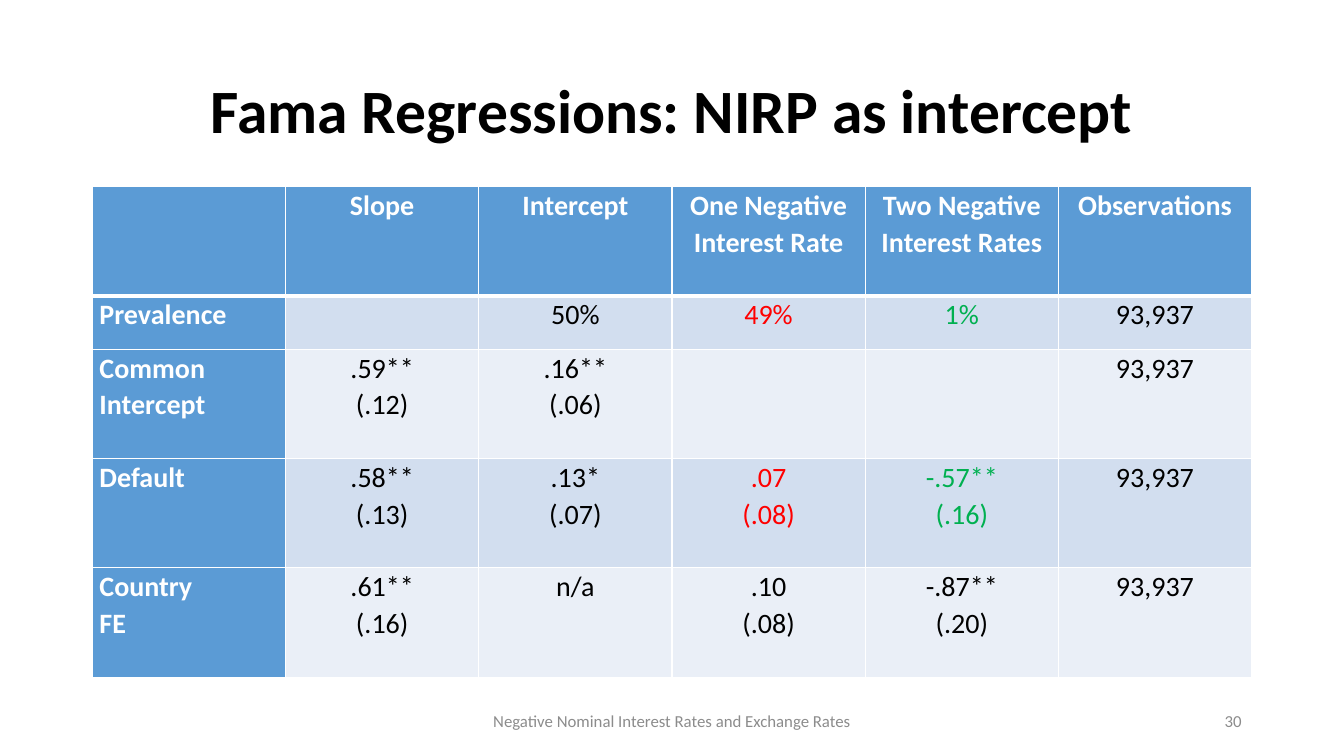
from dataclasses import dataclass

from lxml.etree import SubElement
from pptx import Presentation
from pptx.dml.color import RGBColor
from pptx.enum.text import MSO_ANCHOR as Anchor, PP_ALIGN as Align
from pptx.oxml.ns import qn
from pptx.util import Inches, Pt


@dataclass(frozen=True)
class Theme:
    font: str = "Calibri"
    ink: str = "000000"
    white: str = "FFFFFF"
    header: str = "5B9BD5"
    bands: tuple = ("D2DEEF", "EAEFF7")
    one_negative: str = "FF0000"
    two_negative: str = "00B050"
    muted: str = "8C8C8C"
    title_size: int = 44
    table_size: int = 20
    footer_size: int = 12
    rule: int = 1
    header_rule: int = 3
    title_spacing: float = 0.9
    table_spacing: float = 1.07


class SlideBuilder:
    """Places elements on a grid of 160 columns and 150 rows."""

    COLUMNS, ROWS = 160, 150

    def __init__(self, theme):
        self.theme = theme
        self.deck = Presentation()
        self.deck.slide_width, self.deck.slide_height = Inches(13.33), Inches(7.5)
        self.slide = self.deck.slides.add_slide(self.deck.slide_layouts[5])

    def across(self, columns):
        return round(self.deck.slide_width * columns / self.COLUMNS)

    def down(self, rows):
        return round(self.deck.slide_height * rows / self.ROWS)

    def box(self, left, top, width, height):
        return self.across(left), self.down(top), self.across(width), self.down(height)

    def set_text(self, frame, text, size, color, align, bold=False, spacing=1.0):
        frame.text = text
        for paragraph in frame.paragraphs:
            paragraph.alignment = align
            paragraph.line_spacing = spacing
            for run in paragraph.runs:
                run.font.name = self.theme.font
                run.font.size = Pt(size)
                run.font.bold = bold
                run.font.color.rgb = RGBColor.from_string(color)

    def title(self, text, *area):
        heading = self.slide.shapes.title
        heading.left, heading.top, heading.width, heading.height = self.box(*area)
        heading.text_frame.vertical_anchor = Anchor.MIDDLE
        self.set_text(heading.text_frame, text, self.theme.title_size, self.theme.ink,
                      Align.CENTER, bold=True, spacing=self.theme.title_spacing)

    def footer(self, text, align, *area):
        frame = self.slide.shapes.add_textbox(*self.box(*area)).text_frame
        frame.word_wrap = True
        frame.vertical_anchor = Anchor.MIDDLE
        self.set_text(frame, text, self.theme.footer_size, self.theme.muted, align)

    def borders(self, cell, top, bottom):
        """Draw white rules around a cell, with top and bottom widths in points."""
        rule = self.theme.rule
        properties = cell._tc.get_or_add_tcPr()
        for side, width in (("L", rule), ("R", rule), ("T", top), ("B", bottom)):
            line = SubElement(properties, qn(f"a:ln{side}"), w=str(Pt(width)))
            fill = SubElement(line, qn("a:solidFill"))
            SubElement(fill, qn("a:srgbClr"), val=self.theme.white)

    def cell(self, cell, text, row, column, accent):
        theme = self.theme
        is_heading = row == 0 or column == 0
        self.borders(cell,
                     top=theme.header_rule if row == 1 else theme.rule,
                     bottom=theme.header_rule if row == 0 else theme.rule)
        cell.fill.solid()
        cell.fill.fore_color.rgb = RGBColor.from_string(
            theme.header if is_heading else theme.bands[(row - 1) % 2])
        cell.margin_left = cell.margin_right = Inches(0.07)
        cell.margin_top = cell.margin_bottom = 0
        self.set_text(cell.text_frame, text, theme.table_size,
                      theme.white if is_heading else accent or theme.ink,
                      Align.LEFT if column == 0 else Align.CENTER,
                      bold=is_heading, spacing=theme.table_spacing)

    def table(self, rows, row_heights, accents, *area):
        """Fill a table; accents maps (row, column) to a text colour."""
        table = self.slide.shapes.add_table(
            len(rows), len(rows[0]), *self.box(*area)).table
        for row, (texts, height) in enumerate(zip(rows, row_heights)):
            table.rows[row].height = self.down(height)
            for column, text in enumerate(texts):
                self.cell(table.cell(row, column), text, row, column,
                          accents.get((row, column)))


REGRESSIONS = [
    ["", "Slope", "Intercept", "One Negative\nInterest Rate",
     "Two Negative\nInterest Rates", "Observations"],
    ["Prevalence", "", "50%", "49%", "1%", "93,937"],
    ["Common\nIntercept", ".59**\n(.12)", ".16**\n(.06)", "", "", "93,937"],
    ["Default", ".58**\n(.13)", ".13*\n(.07)", ".07\n(.08)", "-.57**\n(.16)", "93,937"],
    ["Country\nFE", ".61**\n(.16)", "n/a", ".10\n(.08)", "-.87**\n(.20)", "93,937"],
]


def main():
    theme = Theme()
    builder = SlideBuilder(theme)
    left, width = 11, 138
    tall, short = 21.7, 10.6
    heights = [tall, short, tall, tall, tall]
    accents = {(row, column): color for row in (1, 3)
               for column, color in ((3, theme.one_negative), (4, theme.two_negative))}

    builder.title("Fama Regressions: NIRP as intercept", left, 8, width, 29)
    builder.table(REGRESSIONS, heights, accents, left, 37, width, sum(heights))
    builder.footer("Negative Nominal Interest Rates and Exchange Rates",
                   Align.CENTER, 53, 139, 54, 8)
    builder.footer("30", Align.RIGHT, 113, 139, 36, 8)
    builder.deck.save("out.pptx")


if __name__ == "__main__":
    main()
